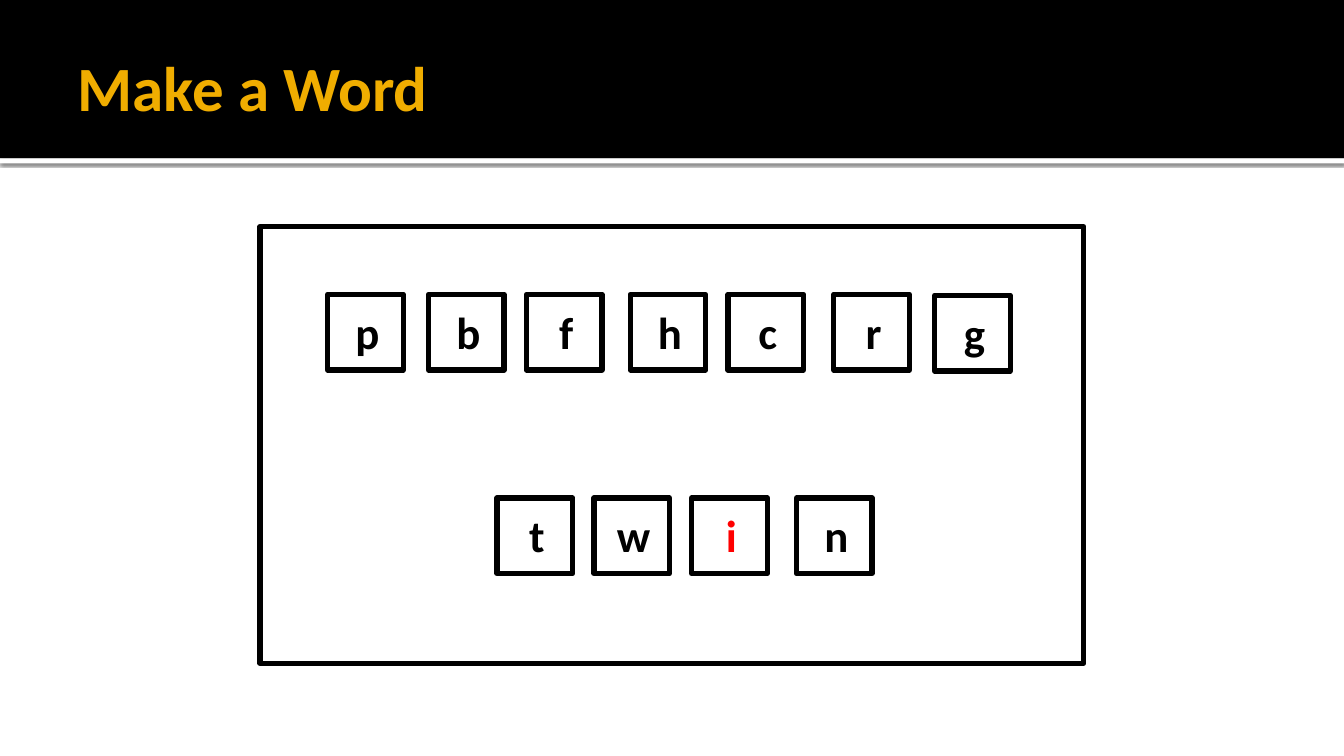
from dataclasses import dataclass

from lxml import etree
from pptx import Presentation
from pptx.dml.color import RGBColor
from pptx.enum.shapes import MSO_SHAPE
from pptx.enum.text import MSO_ANCHOR, MSO_AUTO_SIZE, PP_ALIGN
from pptx.oxml.ns import qn
from pptx.shapes.autoshape import Shape
from pptx.slide import Slide
from pptx.text.text import Font
from pptx.util import Inches, Pt

RECT = MSO_SHAPE.RECTANGLE
MIDDLE = MSO_ANCHOR.MIDDLE
GROW = MSO_AUTO_SIZE.SHAPE_TO_FIT_TEXT
LEFT, CENTER = PP_ALIGN.LEFT, PP_ALIGN.CENTER
FONT = "Calibri"
COLORS = {"black": "000000", "white": "FFFFFF", "gold": "F0AD00", "red": "FF0000"}
WIDE, HIGH = 13.33, 7.5
BAND = 1.57
SIDE = 0.75


@dataclass(frozen=True)
class Tile:
    """A letter and the corner of its square."""

    letter: str
    left: float
    top: float
    color: str = "black"


UPPER, LOWER = 2.92, 4.94
TILES = [
    Tile("p", 3.25, UPPER),
    Tile("b", 4.25, UPPER),
    Tile("f", 5.22, UPPER),
    Tile("h", 6.25, UPPER),
    Tile("c", 7.22, UPPER),
    Tile("r", 8.27, UPPER),
    Tile("g", 9.27, 2.93),
    Tile("t", 4.93, LOWER),
    Tile("w", 5.89, LOWER),
    Tile("i", 6.86, LOWER, "red"),
    Tile("n", 7.9, LOWER),
]


def shade(name: str) -> RGBColor:
    """Return the named colour."""
    return RGBColor.from_string(COLORS[name])


def style(font: Font, size: float, color: str) -> None:
    """Set a bold font."""
    font.name, font.size, font.bold = FONT, Pt(size), True
    font.color.rgb = shade(color)


def add_box(slide: Slide, left: float, top: float, width: float, height: float) -> Shape:
    """Add a plain rectangle without shadow."""
    box = slide.shapes.add_shape(
        RECT, Inches(left), Inches(top), Inches(width), Inches(height)
    )
    box.shadow.inherit = False
    return box


def add_bar(slide: Slide, top: float, height: float, color: str) -> Shape:
    """Add a filled bar across the slide, behind the title."""
    bar = add_box(slide, 0, top, WIDE, height)
    bar.fill.solid()
    bar.fill.fore_color.rgb = shade(color)
    bar.line.fill.background()
    slide.shapes.title.element.addprevious(bar.element)
    return bar


def add_frame(slide: Slide, left: float, top: float, width: float, height: float) -> None:
    """Add an unfilled rectangle with a thick black outline."""
    frame = add_box(slide, left, top, width, height)
    frame.fill.background()
    frame.line.color.rgb = shade("black")
    frame.line.width = Pt(3.78)


def cast(bar: Shape) -> None:
    """Give a bar a soft shadow below it."""
    effect = bar.element.spPr.find(qn("a:effectLst"))
    outer = etree.SubElement(
        effect,
        qn("a:outerShdw"),
        blurRad=str(Pt(2.5)),
        dist=str(Pt(0.8)),
        dir="5400000",
        algn="t",
        rotWithShape="0",
    )
    color = etree.SubElement(outer, qn("a:srgbClr"), val=COLORS["black"])
    etree.SubElement(color, qn("a:alpha"), val="60000")


def set_title(slide: Slide, text: str) -> None:
    """Place and format the title."""
    title = slide.shapes.title
    title.left, title.top = Inches(0.67), Inches(0.17)
    title.width, title.height = Inches(12), Inches(1.37)
    frame = title.text_frame
    frame.text = text
    frame.vertical_anchor = MIDDLE
    frame.margin_left = Inches(0.1)
    frame.margin_right = frame.margin_top = frame.margin_bottom = Inches(0.05)
    line = frame.paragraphs[0]
    line.alignment = LEFT
    style(line.font, 45, "gold")


def add_tile(slide: Slide, tile: Tile) -> None:
    """Add a square and its letter."""
    add_frame(slide, tile.left, tile.top, SIDE, SIDE)
    label = slide.shapes.add_textbox(
        Inches(tile.left + 0.04), Inches(tile.top + 0.05), Inches(0.71), Inches(0.64)
    )
    frame = label.text_frame
    frame.text = tile.letter
    frame.word_wrap = True
    frame.auto_size = GROW
    line = frame.paragraphs[0]
    line.alignment = CENTER
    style(line.font, 32, tile.color)


def main() -> None:
    """Build and save the slide."""
    deck = Presentation()
    deck.slide_width, deck.slide_height = Inches(WIDE), Inches(HIGH)
    slide = deck.slides.add_slide(deck.slide_layouts.get_by_name("Title Only"))
    cast(add_bar(slide, BAND, 0.05, "white"))
    add_bar(slide, 0, BAND, "black")
    set_title(slide, "Make a Word")
    add_frame(slide, 2.58, 2.25, 8.17, 4.33)
    for tile in TILES:
        add_tile(slide, tile)
    deck.save("out.pptx")


if __name__ == "__main__":
    main()
